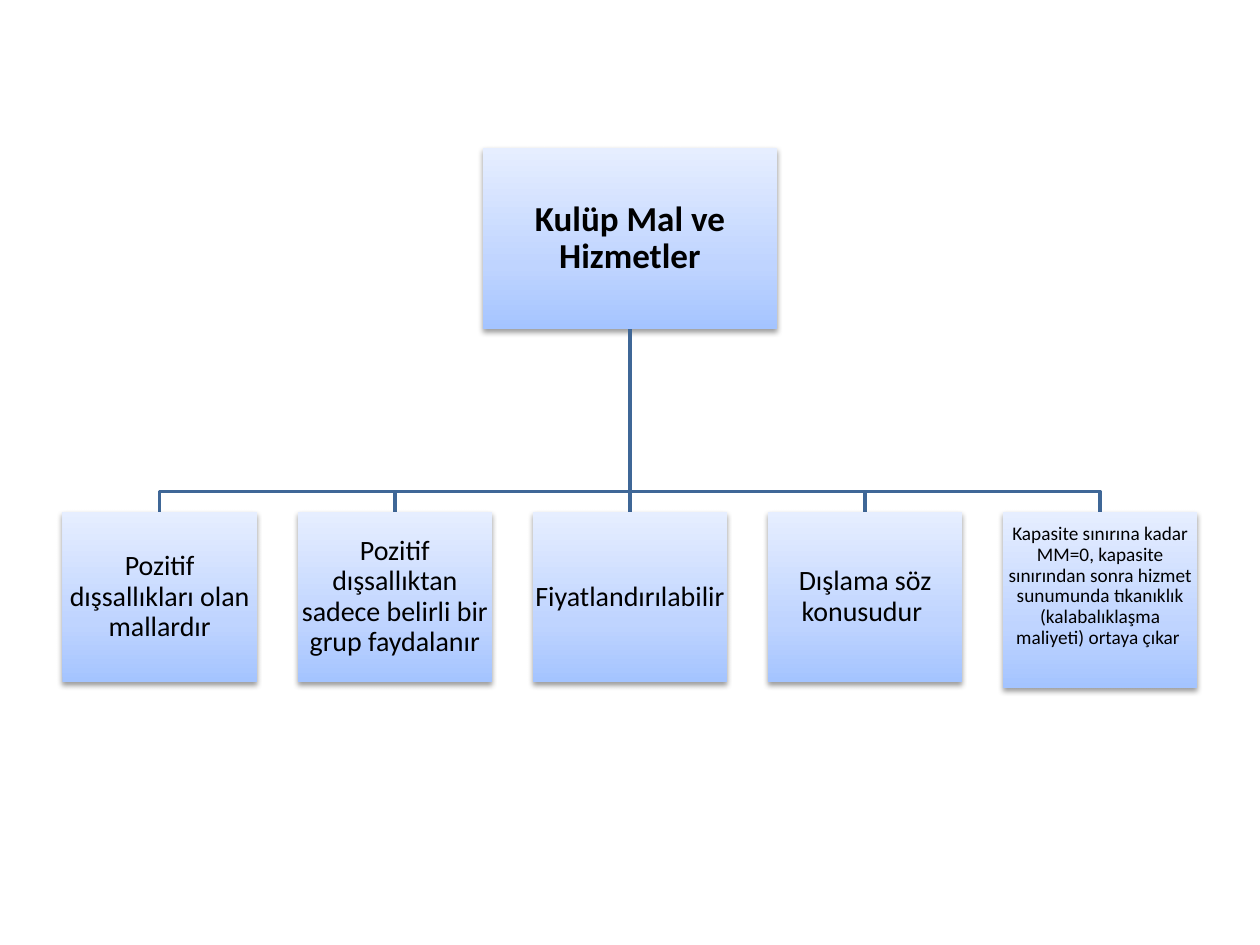
from copy import deepcopy

from lxml import etree
from pptx import Presentation
from pptx import util as u
from pptx.dml.color import RGBColor
from pptx.enum import shapes, text
from pptx.oxml.ns import qn

CENTER, PITCH = 12.7, 4.74
ROOT_TOP, ROOT_W, ROOT_H = 2.98, 5.94, 3.66
BUS_Y, LEAF_TOP, LEAF_W, LEAF_H = 9.91, 10.32, 3.92, 3.43
GRADIENT = [(0, "A4C4FF"), (0.35, "BFD4FF"), (1, "E6EEFF")]
LEAVES = [
    ("Pozitif dışsallıkları olan mallardır", {}),
    ("Pozitif dışsallıktan sadece belirli bir grup faydalanır", {}),
    ("Fiyatlandırılabilir ", {}),
    ("Dışlama söz konusudur ", {}),
    ("Kapasite sınırına kadar MM=0, kapasite sınırından sonra hizmet "
     "sunumunda tıkanıklık (kalabalıklaşma maliyeti) ortaya çıkar ",
     {"size": 11, "height": 3.55, "bottom": 0.57}),
]


def color(value):
    """Turn a hex string into a colour."""
    return RGBColor.from_string(value)


def apply(obj, values):
    """Set each attribute named in a dict of format values."""
    for name, value in values.items():
        setattr(obj, name, value)


def fill_gradient(sp):
    """Fill a box with the vertical three-stop gradient."""
    sp.fill.gradient()
    sp.fill.gradient_angle = 90
    first = sp.fill._fill._gradFill.find(qn("a:gsLst"))[0]
    first.addnext(deepcopy(first))
    for stop, (position, value) in zip(sp.fill.gradient_stops, GRADIENT):
        stop.position = position
        stop.color.rgb = color(value)


def add_shadow(sp):
    """Give a box a soft shadow straight below it."""
    sp.shadow.inherit = False
    effects = sp._element.spPr.find(qn("a:effectLst"))
    shadow = etree.SubElement(effects, qn("a:outerShdw"), blurRad="40000",
                              dist="20000", dir="5400000", rotWithShape="0")
    black = etree.SubElement(shadow, qn("a:srgbClr"), val="000000")
    etree.SubElement(black, qn("a:alpha"), val="38000")


def format_box(sp, label, center, top, width, height, size=16, bold=False, bottom=0.02):
    """Place, paint and label one box of the chart."""
    apply(sp, {"left": u.Cm(center - width / 2), "top": u.Cm(top),
               "width": u.Cm(width), "height": u.Cm(height)})
    fill_gradient(sp)
    sp.line.fill.background()
    add_shadow(sp)
    tf = sp.text_frame
    inset = u.Cm(0.02)
    apply(tf, {"word_wrap": True, "auto_size": text.MSO_AUTO_SIZE.NONE,
               "vertical_anchor": text.MSO_ANCHOR.MIDDLE,
               "margin_left": inset, "margin_right": inset,
               "margin_top": inset, "margin_bottom": u.Cm(bottom)})
    p = tf.paragraphs[0]
    apply(p, {"alignment": text.PP_ALIGN.CENTER, "line_spacing": 0.9})
    r = p.add_run()
    r.text = label
    apply(r.font, {"name": "Calibri", "size": u.Pt(size), "bold": bold})
    r.font.color.rgb = color("000000")


def add_branch(s, x):
    """Link the root box to the leaf centred at x."""
    start = ROOT_TOP + ROOT_H
    if x == CENTER:
        sp = s.shapes.add_connector(shapes.MSO_CONNECTOR.STRAIGHT, u.Cm(x),
                                    u.Cm(start), u.Cm(x), u.Cm(LEAF_TOP))
        etree.SubElement(sp._element.spPr, qn("a:effectLst"))
    else:
        builder = s.shapes.build_freeform(u.Cm(CENTER), u.Cm(start))
        corners = [(CENTER, BUS_Y), (x, BUS_Y), (x, LEAF_TOP)]
        builder.add_line_segments([(u.Cm(a), u.Cm(b)) for a, b in corners], close=False)
        sp = builder.convert_to_shape()
        sp.fill.background()
        sp.shadow.inherit = False
    sp.line.color.rgb = color("3F6797")
    sp.line.width = u.Pt(2)


def add_leaf(s, x, label, size=16, height=LEAF_H, bottom=0.02):
    """Add one box of the lower row."""
    sp = s.shapes.add_shape(shapes.MSO_SHAPE.RECTANGLE, 0, 0, 0, 0)
    format_box(sp, label, x, LEAF_TOP, LEAF_W, height, size, bottom=bottom)


def main():
    """Build the slide and save it."""
    prs = Presentation()
    apply(prs, {"slide_width": u.Cm(25.4), "slide_height": u.Cm(19.05)})
    s = prs.slides.add_slide(prs.slide_layouts[5])
    format_box(s.shapes.title, "Kulüp Mal ve Hizmetler", CENTER, ROOT_TOP,
               ROOT_W, ROOT_H, size=20, bold=True)
    centers = [CENTER + (i - 2) * PITCH for i in range(len(LEAVES))]
    for x in reversed(centers):
        add_branch(s, x)
    for x, (label, options) in zip(centers, LEAVES):
        add_leaf(s, x, label, **options)
    prs.save("out.pptx")


if __name__ == "__main__":
    main()
